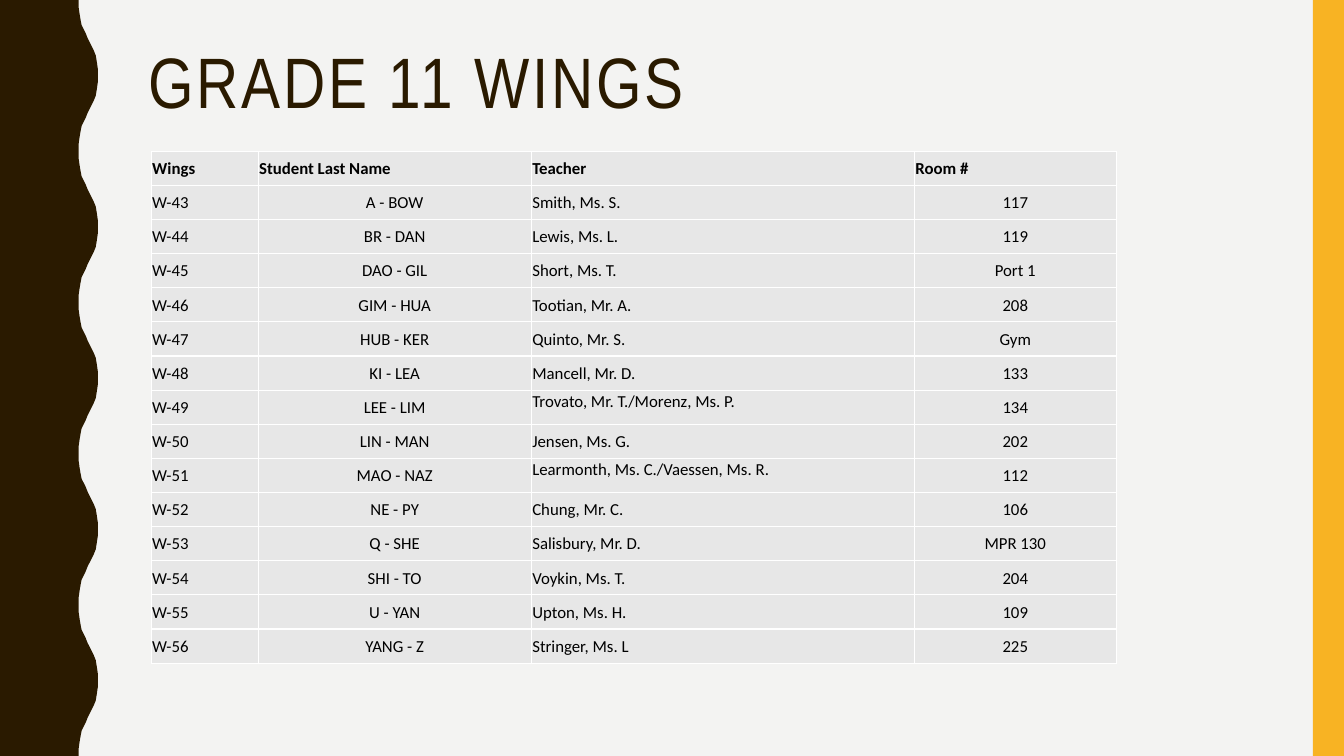
from dataclasses import dataclass

from lxml import etree
from pptx import Presentation
from pptx.dml.color import RGBColor
from pptx.enum.shapes import MSO_SHAPE
from pptx.enum.text import MSO_ANCHOR, PP_ALIGN
from pptx.oxml.ns import qn
from pptx.util import Inches, Pt

RECT = MSO_SHAPE.RECTANGLE
TOP, MIDDLE = MSO_ANCHOR.TOP, MSO_ANCHOR.MIDDLE
LEFT, CENTER = PP_ALIGN.LEFT, PP_ALIGN.CENTER


@dataclass(frozen=True)
class Theme:
    paper: str = "F3F3F2"
    brown: str = "2A1A00"
    gold: str = "F8B323"
    cell: str = "E7E7E7"
    border: str = "FFFFFF"
    ink: str = "000000"
    title_font: str = "Arial Narrow"
    body_font: str = "Calibri"
    title_size: int = 51
    body_size: int = 12


HEADER = ("Wings", "Student Last Name", "Teacher", "Room #")
FIRST_WING = 43
WINGS = [
    ("A - BOW", "Smith, Ms. S.", "117"),
    ("BR - DAN", "Lewis, Ms. L.", "119"),
    ("DAO - GIL", "Short, Ms. T.", "Port 1"),
    ("GIM - HUA", "Tootian, Mr. A.", "208"),
    ("HUB - KER", "Quinto, Mr. S.", "Gym"),
    ("KI - LEA", "Mancell, Mr. D.", "133"),
    ("LEE - LIM", "Trovato, Mr. T./Morenz, Ms. P.", "134"),
    ("LIN - MAN", "Jensen, Ms. G.", "202"),
    ("MAO - NAZ", "Learmonth, Ms. C./Vaessen, Ms. R.", "112"),
    ("NE - PY", "Chung, Mr. C.", "106"),
    ("Q - SHE", "Salisbury, Mr. D.", "MPR 130"),
    ("SHI - TO", "Voykin, Ms. T.", "204"),
    ("U - YAN", "Upton, Ms. H.", "109"),
    ("YANG - Z", "Stringer, Ms. L", "225"),
]
COLUMN_WIDTHS = (1.06, 2.71, 3.8, 2)
COLUMN_ALIGNS = (LEFT, CENTER, LEFT, CENTER)

# Left edge of one wave, from trough to crest
WAVE_PERIOD, WAVE_COUNT = 1.5, 5
HALF_WAVE = [
    (0.78, 0), (0.78, 0.07), (0.79, 0.14), (0.8, 0.2), (0.81, 0.25),
    (0.83, 0.29), (0.85, 0.33), (0.87, 0.38), (0.89, 0.42), (0.91, 0.46),
    (0.93, 0.5), (0.95, 0.55), (0.96, 0.61), (0.97, 0.68), (0.97, 0.75),
]


def write_text(tf, text, *, font, size, color, bold=False, align=LEFT,
               line_spacing=None, tracking=None):
    p = tf.paragraphs[0]
    p.alignment = align
    if line_spacing:
        p.line_spacing = line_spacing
    r = p.add_run()
    r.text = text
    r.font.name, r.font.size, r.font.bold = font, Pt(size), bold
    r.font.color.rgb = RGBColor.from_string(color)
    if tracking:
        r.font._element.set("spc", str(tracking * 100))


class SlideBuilder:
    def __init__(self, prs, theme):
        self.theme = theme
        self.s = prs.slides.add_slide(prs.slide_layouts[6])
        self.fill(self.s.background, theme.paper)

    def fill(self, target, color):
        target.fill.solid()
        target.fill.fore_color.rgb = RGBColor.from_string(color)

    def finish(self, sp, color):
        self.fill(sp, color)
        sp.line.fill.background()
        sp.shadow.inherit = False

    def bar(self, x, y, w, h, color):
        sp = self.s.shapes.add_shape(RECT, Inches(x), Inches(y), Inches(w), Inches(h))
        self.finish(sp, color)

    def outline(self, points, color):
        points = [(Inches(x), Inches(y)) for x, y in points]
        builder = self.s.shapes.build_freeform(*points[0])
        builder.add_line_segments(points[1:], close=True)
        self.finish(builder.convert_to_shape(), color)

    def title(self, text, x, y, w, h):
        sp = self.s.shapes.add_textbox(Inches(x), Inches(y), Inches(w), Inches(h))
        tf = sp.text_frame
        tf.word_wrap = True
        tf.vertical_anchor = TOP
        write_text(tf, text, font=self.theme.title_font, size=self.theme.title_size,
                   color=self.theme.brown, line_spacing=0.9, tracking=2)

    def borders(self, cell):
        tc_pr = cell._tc.get_or_add_tcPr()
        for side in ("a:lnL", "a:lnR", "a:lnT", "a:lnB"):
            ln = etree.SubElement(tc_pr, qn(side), w=str(Pt(1)))
            solid = etree.SubElement(ln, qn("a:solidFill"))
            etree.SubElement(solid, qn("a:srgbClr"), val=self.theme.border)

    def cell(self, cell, text, *, anchor, align, bold):
        self.borders(cell)
        self.fill(cell, self.theme.cell)
        cell.margin_left = cell.margin_right = cell.margin_top = Inches(0.01)
        cell.margin_bottom = 0
        cell.vertical_anchor = anchor
        write_text(cell.text_frame, text, font=self.theme.body_font,
                   size=self.theme.body_size, color=self.theme.ink,
                   bold=bold, align=align)

    def table(self, rows, x, y, h):
        frame = self.s.shapes.add_table(len(rows), len(COLUMN_WIDTHS), Inches(x),
                                        Inches(y), Inches(sum(COLUMN_WIDTHS)), Inches(h))
        table = frame.table
        table.first_row = table.horz_banding = False
        for column, width in zip(table.columns, COLUMN_WIDTHS):
            column.width = Inches(width)
        for i, row in enumerate(rows):
            table.rows[i].height = Inches(h / len(rows))
            for j, text in enumerate(row):
                # Shared wings list two teachers at the top of the cell
                self.cell(table.cell(i, j), text,
                          anchor=TOP if "/" in text else MIDDLE,
                          align=COLUMN_ALIGNS[j] if i else LEFT, bold=i == 0)


def main():
    prs = Presentation()
    prs.slide_width, prs.slide_height = Inches(13.33), Inches(7.5)
    theme = Theme()
    slide = SlideBuilder(prs, theme)

    # Wavy left band and right bar
    wave = HALF_WAVE + [(x, WAVE_PERIOD - y) for x, y in HALF_WAVE[-2::-1]]
    edge = [(x, y + n * WAVE_PERIOD) for n in range(WAVE_COUNT) for x, y in wave]
    slide.outline([(0, 0), *edge, (0, 7.5)], theme.brown)
    slide.bar(13.02, 0, 0.31, 7.5, theme.gold)

    # Title
    slide.title("GRADE 11 WINGS", 1.37, 0.42, 11.13, 1.63)

    # Wing assignments
    rows = [(f"W-{n}", *wing) for n, wing in enumerate(WINGS, FIRST_WING)]
    slide.table([HEADER, *rows], 1.5, 1.5, 5.08)

    prs.save("out.pptx")


if __name__ == "__main__":
    main()
